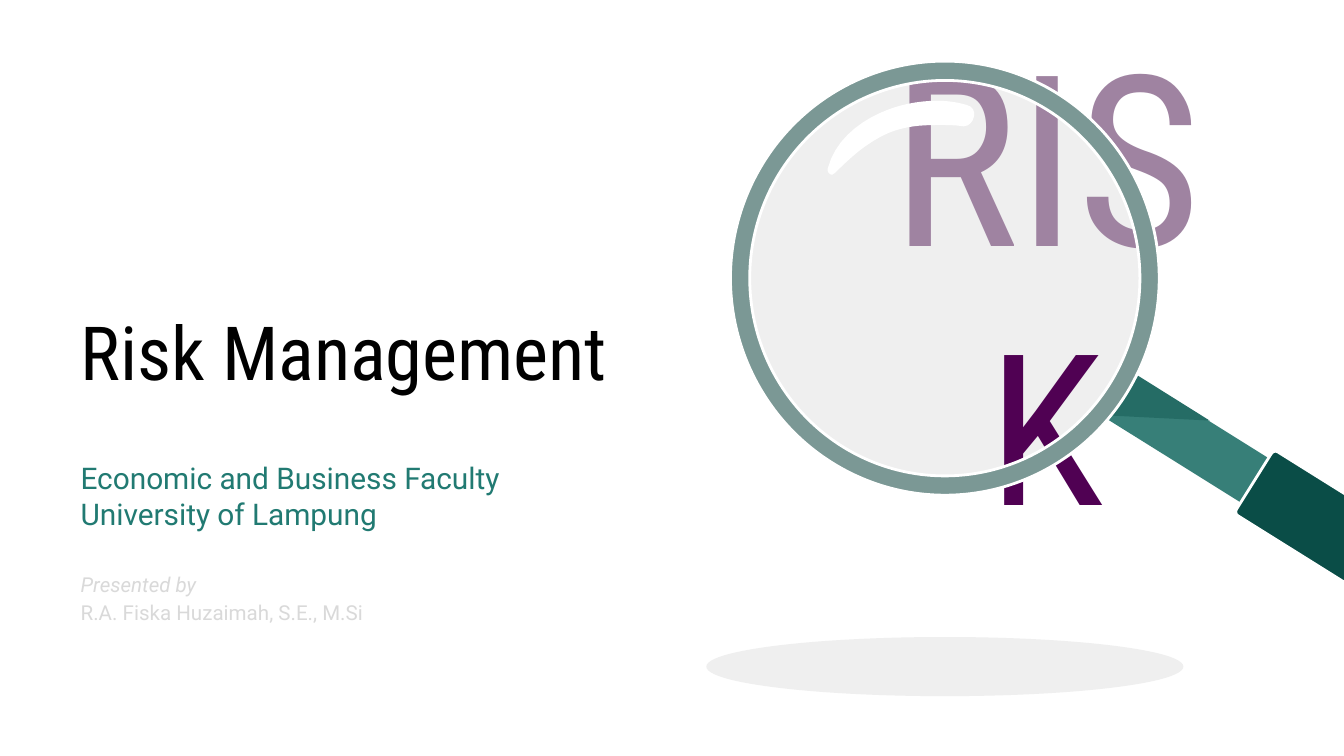
from lxml.etree import SubElement
from pptx import Presentation
from pptx.dml.color import RGBColor
from pptx.enum.shapes import MSO_SHAPE as Kind
from pptx.enum.text import MSO_ANCHOR as Anchor, MSO_AUTO_SIZE as Fit, PP_ALIGN as Align
from pptx.oxml.ns import qn
from pptx.util import Inches, Pt

WHITE = RGBColor(0xFF, 0xFF, 0xFF)
BLACK = RGBColor(0x00, 0x00, 0x00)
GLASS = RGBColor(0xE0, 0xE0, 0xE0)
SHADE = RGBColor(0xEF, 0xEF, 0xEF)
RIM = RGBColor(0x7B, 0x98, 0x95)
ARM = RGBColor(0x37, 0x7F, 0x78)
ARM_DARK = RGBColor(0x25, 0x6C, 0x65)
GRIP = RGBColor(0x0A, 0x4D, 0x47)
TEAL = RGBColor(0x21, 0x7A, 0x72)
PALE = RGBColor(0xD9, 0xD9, 0xD9)
MAUVE = RGBColor(0x9F, 0x83, 0xA1)
PLUM = RGBColor(0x50, 0x01, 0x53)
HEAD, BODY = "Roboto Condensed", "Roboto"
LENS = (7.03, 2.07)

GLINT = [
    (6.97, 0.75),
    (6.83, 0.75), (6.68, 0.78), (6.55, 0.84),
    (6.37, 0.92), (6.21, 1.06), (6.16, 1.25),
    (6.15, 1.27), (6.17, 1.3), (6.19, 1.3),
    (6.2, 1.3), (6.2, 1.29), (6.21, 1.29),
    (6.33, 1.17), (6.45, 1.06), (6.61, 0.99),
    (6.73, 0.94), (6.85, 0.93), (6.98, 0.93),
    (7.04, 0.93), (7.1, 0.93), (7.17, 0.94),
    (7.25, 0.94), (7.29, 0.8), (7.19, 0.78),
    (7.12, 0.76), (7.05, 0.75), (6.97, 0.75),
]


def paint(shape, fill, line=0):
    shape.shadow.inherit = False
    shape.fill.solid()
    shape.fill.fore_color.rgb = fill
    if line:
        shape.line.color.rgb = WHITE
        shape.line.width = Pt(line)
    else:
        shape.line.fill.background()
    return shape


def preset(slide, kind, mid, size, fill, line=0, turn=0, adjust=None):
    """Add a preset shape centred on mid and turned by some degrees."""
    (x, y), (w, h) = mid, size
    shape = slide.shapes.add_shape(
        kind, Inches(x - w / 2), Inches(y - h / 2), Inches(w), Inches(h))
    shape.rotation = turn
    if adjust is not None:
        shape.adjustments[0] = adjust
    return paint(shape, fill, line)


def outline(slide, points, fill):
    spots = [(Inches(x), Inches(y)) for x, y in points]
    pen = slide.shapes.build_freeform(*spots[0])
    pen.add_line_segments(spots[1:], close=True)
    return paint(pen.convert_to_shape(), fill)


def trace(knots, steps=8):
    """Turn a chain of cubic curves into points along it."""
    points = [knots[0]]
    for i in range(0, len(knots) - 1, 3):
        for t in (n / steps for n in range(1, steps + 1)):
            parts = ((1 - t) ** 3, 3 * t * (1 - t) ** 2, 3 * t * t * (1 - t), t ** 3)
            points.append(tuple(
                sum(p * knot[axis] for p, knot in zip(parts, knots[i:i + 4]))
                for axis in (0, 1)))
    return points


def fade(shape, percent):
    color = shape.fill._xPr.find(qn("a:solidFill"))[0]
    SubElement(color, qn("a:alpha"), val=str(percent * 1000))


def frame(shape, box, anchor=Anchor.MIDDLE, top=0.1):
    """Place a text shape and return its empty text frame."""
    shape.left, shape.top, shape.width, shape.height = map(Inches, box)
    text = shape.text_frame
    text.word_wrap = True
    text.auto_size = Fit.NONE
    text.vertical_anchor = anchor
    text.margin_left = text.margin_right = text.margin_bottom = Inches(0.1)
    text.margin_top = Inches(top)
    return text


def write(para, text, size, color, font=BODY, italic=False,
          align=Align.LEFT, before=0, spacing=1.0):
    para.alignment = align
    para.space_before = Pt(before)
    para.line_spacing = spacing
    run = para.add_run()
    run.text = text
    run.font.size = Pt(size)
    run.font.name = font
    run.font.italic = italic
    run.font.color.rgb = color


def titles(slide):
    head = frame(slide.shapes.title, (0.5, 1.86, 4.49, 1.5))
    write(head.paragraphs[0], "Risk Management", 40, BLACK, font=HEAD)

    body = frame(slide.placeholders[1], (0.5, 3.39, 4.49, 1.55), Anchor.TOP, 0.03)
    lines = [
        ("Economic and Business Faculty", dict(size=16, color=TEAL)),
        ("University of Lampung", dict(size=16, color=TEAL)),
        ("Presented by",
         dict(size=11, color=PALE, italic=True, before=20, spacing=1.14)),
        ("R.A. Fiska Huzaimah, S.E., M.Si", dict(size=11, color=PALE, spacing=1.14)),
    ]
    for i, (text, style) in enumerate(lines):
        write(body.add_paragraph() if i else body.paragraphs[0], text, **style)


def word(slide):
    box = slide.shapes.add_textbox(0, 0, 0, 0)
    para = frame(box, (6.12, 1.17, 3.33, 1.79)).paragraphs[0]
    write(para, "RIS", 128, MAUVE, font=HEAD, align=Align.CENTER)
    write(para, "K", 113, PLUM, font=HEAD, align=Align.CENTER)


def handle(slide):
    preset(slide, Kind.RECTANGLE, (8.96, 3.34), (1.59, 0.39), ARM, turn=32)
    outline(slide, [(8.41, 2.76), (8.33, 2.93), (8.21, 3.09), (9, 3.13)], ARM_DARK)
    preset(slide, Kind.ROUNDED_RECTANGLE, (10.11, 4.07), (1.84, 0.56), GRIP,
           line=1.5, turn=32, adjust=0.06)


def main():
    deck = Presentation()
    deck.slide_width = Inches(10)
    deck.slide_height = deck.slide_width * 9 // 16
    slide = deck.slides.add_slide(deck.slide_layouts[0])
    titles(slide)
    fade(preset(slide, Kind.OVAL, LENS, (2.98, 3.01), GLASS, line=3), 50)
    word(slide)
    preset(slide, Kind.OVAL, (7.03, 4.96), (3.55, 0.44), SHADE)
    handle(slide)
    preset(slide, Kind.DONUT, LENS, (3.19, 3.23), RIM, line=1.5, adjust=0.045)
    outline(slide, trace(GLINT), WHITE)
    deck.save("out.pptx")


if __name__ == "__main__":
    main()
